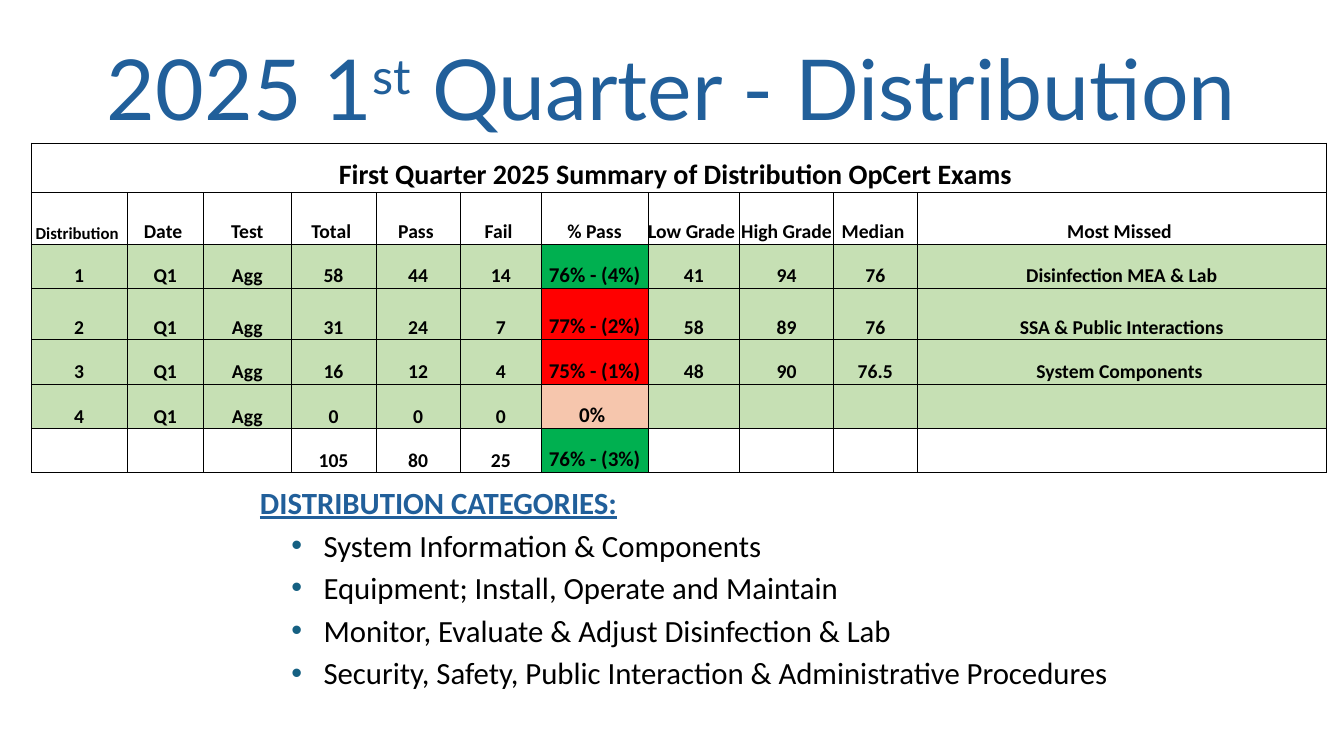
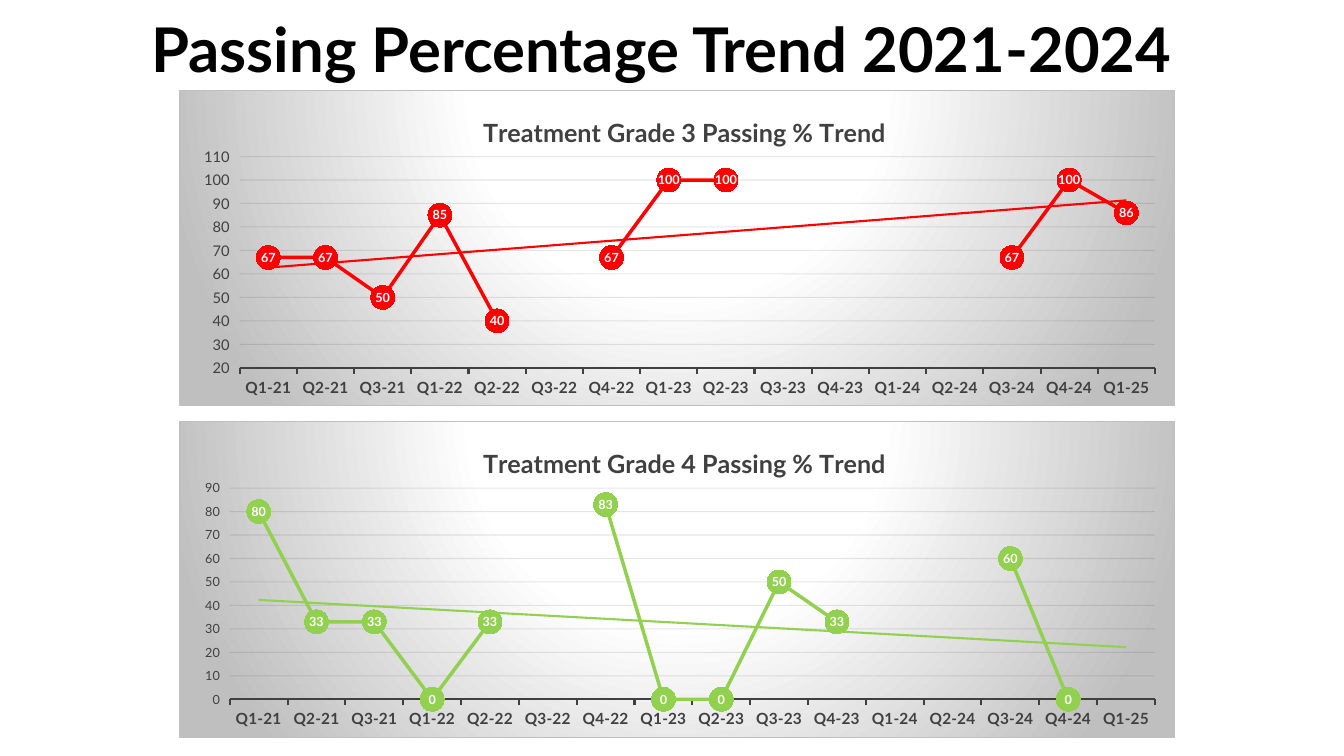
from lxml import etree
from pptx import Presentation
from pptx.chart.data import CategoryChartData
from pptx.dml.color import RGBColor
from pptx.enum.chart import XL_CHART_TYPE, XL_LABEL_POSITION, XL_MARKER_STYLE, XL_TICK_MARK
from pptx.enum.text import MSO_ANCHOR, MSO_AUTO_SIZE, PP_ALIGN
from pptx.oxml import parse_xml
from pptx.oxml.ns import nsdecls, qn
from pptx.util import Pt

LINE = XL_CHART_TYPE.LINE_MARKERS
MIDDLE = XL_LABEL_POSITION.CENTER
ROUND = XL_MARKER_STYLE.CIRCLE
OUT = XL_TICK_MARK.OUTSIDE
LOW = MSO_ANCHOR.BOTTOM
CENTER = PP_ALIGN.CENTER
FIXED = MSO_AUTO_SIZE.NONE

# Palette and fonts
BLUE, TEAL, BLACK, WHITE = "215F9A", "156082", "000000", "FFFFFF"
GRAY, EDGE, GRID = "404040", "BFBFBF", "0D0D0D"
RED, LIME = "FF0000", "92D050"
PALE, GREEN, PEACH = "C6E0B4", "00B050", "F6C6AD"
HEAD, BODY = "Lato", "Calibri"

# Table content
COLS = [68.4, 54.7, 62.6, 60.5, 60.5, 57.6, 76.3, 65.5, 67, 59.8, 292.3]
ROWS = [35.3, 36.7, 31.7, 36.7, 31.7, 31.7, 31.7]
RATE = 6
BANNER = "First Quarter 2025 Summary of Distribution OpCert Exams "
HEADS = ["Distribution ", "Date ", "Test", "Total ", "Pass ", "Fail ", "% Pass",
         "Low Grade ", "High Grade ", "Median ", "Most Missed "]
EXAMS = [
    ["1", "Q1", "Agg", "58", "44", "14", "76% - (4%)", "41", "94", "76", "Disinfection MEA & Lab"],
    ["2", "Q1", "Agg", "31", "24", "7", "77% - (2%)", "58", "89", "76", "SSA & Public Interactions"],
    ["3", "Q1", "Agg", "16", "12", "4", "75% - (1%)", "48", "90", "76.5", "System Components "],
    ["4", "Q1", "Agg", "0", "0", "0", "0% ", "", "", "", ""],
    ["", "", "", "105", "80", "25", "76% - (3%)", "", "", "", ""],
]
RATES = [GREEN, RED, RED, PEACH, GREEN]
TOPICS = [
    "System Information & Components",
    "Equipment; Install, Operate and Maintain",
    "Monitor, Evaluate & Adjust Disinfection & Lab",
    "Security, Safety, Public Interaction & Administrative Procedures",
]

# Chart content
TERMS = ("Q1-21 Q2-21 Q3-21 Q1-22 Q2-22 Q3-22 Q4-22 Q1-23 "
         "Q2-23 Q3-23 Q4-23 Q1-24 Q2-24 Q3-24 Q4-24 Q1-25").split()
GRADE3 = [67, 67, 50, 85, 40, None, 67, 100, 100, None, None, None, None, 67, 100, 86]
GRADE4 = [80, 33, 33, 0, 33, None, 83, 0, 0, 50, 33, None, None, 60, 0, None]


def rgb(code):
    return RGBColor.from_string(code)


def solid(code):
    return f'<a:solidFill><a:srgbClr val="{code}"/></a:solidFill>'


def layout(x, y, w=None, h=None):
    """Manual chart layout; with a size it sets the inner plot area."""
    inner = '<c:layoutTarget val="inner"/>' if w else ""
    size = f'<c:w val="{w}"/><c:h val="{h}"/>' if w else ""
    return parse_xml(
        f'<c:layout {nsdecls("c")}><c:manualLayout>{inner}<c:xMode val="edge"/>'
        f'<c:yMode val="edge"/><c:x val="{x}"/><c:y val="{y}"/>{size}'
        '</c:manualLayout></c:layout>')


def place(owner, node, index):
    """Put a layout in a chart part, in place of any it has."""
    for old in owner.findall(qn("c:layout")):
        owner.remove(old)
    owner.insert(index, node)


class Deck:
    def __init__(self):
        self.prs = Presentation()
        self.prs.slide_width, self.prs.slide_height = Pt(960), Pt(540)
        self.slide = None

    def style(self, font, size, color, bold=False, face=BODY):
        font.name, font.size, font.bold = face, Pt(size), bold
        font.color.rgb = rgb(color)

    def text(self, para, words, size, color, bold=False, face=BODY):
        run = para.add_run()
        run.text = words
        self.style(run.font, size, color, bold, face)
        return run

    def title(self, box, parts, size, color, bold=False):
        """Start a slide; parts are (words, raised) pairs."""
        self.slide = self.prs.slides.add_slide(self.prs.slide_layouts[5])
        shape = self.slide.shapes.title
        shape.left, shape.top, shape.width, shape.height = map(Pt, box)
        frame = shape.text_frame
        frame.auto_size, frame.vertical_anchor = FIXED, LOW
        para = frame.paragraphs[0]
        para.alignment, para.line_spacing = CENTER, 0.9
        for words, raised in parts:
            run = self.text(para, words, size, color, bold, HEAD)
            if raised:
                run.font._element.set("baseline", "30000")

    def bullets(self, box, head, items):
        frame = self.slide.shapes.add_textbox(*map(Pt, box)).text_frame
        frame.word_wrap = True
        run = self.text(frame.paragraphs[0], head, 22, BLUE, True)
        run.font.underline = True
        for item in items:
            para = frame.add_paragraph()
            props = para._p.get_or_add_pPr()
            props.set("marL", str(Pt(45.4)))
            props.set("indent", str(Pt(-23)))
            tint = etree.SubElement(props, qn("a:buClr"))
            etree.SubElement(tint, qn("a:srgbClr"), val=TEAL)
            etree.SubElement(props, qn("a:buFont"), typeface="Arial")
            etree.SubElement(props, qn("a:buChar"), char="•")
            para.space_before = Pt(4)
            self.text(para, item, 22, BLACK)

    def cell(self, cell, words, size, fill=None):
        cell.margin_left = cell.margin_right = cell.margin_top = cell.margin_bottom = 0
        cell.vertical_anchor = LOW
        para = cell.text_frame.paragraphs[0]
        para.alignment = CENTER
        if words:
            self.text(para, words, size, BLACK, True)
        # Borders come before the fill
        props = cell._tc.get_or_add_tcPr()
        for side in ("lnL", "lnR", "lnT", "lnB"):
            props.append(parse_xml(
                f'<a:{side} {nsdecls("a")} w="{Pt(0.5)}">{solid(BLACK)}</a:{side}>'))
        if fill:
            cell.fill.solid()
            cell.fill.fore_color.rgb = rgb(fill)
        else:
            cell.fill.background()

    def table(self, left, top):
        table = self.slide.shapes.add_table(
            len(ROWS), len(COLS), Pt(left), Pt(top), Pt(sum(COLS)), Pt(sum(ROWS))).table
        table.first_row = table.horz_banding = False
        for col, width in zip(table.columns, COLS):
            col.width = Pt(width)
        for row, height in zip(table.rows, ROWS):
            row.height = Pt(height)
        # Banner and heads
        table.cell(0, 0).merge(table.cell(0, len(COLS) - 1))
        for c, head in enumerate(HEADS):
            self.cell(table.cell(0, c), "" if c else BANNER, 20)
            self.cell(table.cell(1, c), head, 14 if c else 12)
        # Exams, then the total row
        for r, (exam, rate) in enumerate(zip(EXAMS, RATES)):
            base = PALE if exam[0] else None
            for c, words in enumerate(exam):
                hit = c == RATE
                self.cell(table.cell(r + 2, c), words, 15 if hit else 14, rate if hit else base)

    def trend(self, top, name, values, color, low, high, size, plot):
        """Line chart with a linear trend line."""
        data = CategoryChartData()
        data.categories = TERMS
        data.add_series("Series 1", values)
        chart = self.slide.shapes.add_chart(
            LINE, Pt(128.2), Pt(top), Pt(711.4), Pt(226), data).chart
        self.style(chart.font, 10, BLACK, face=HEAD)
        chart.has_legend = False

        # Title and plot area
        chart.has_title = True
        para = chart.chart_title.text_frame.paragraphs[0]
        self.text(para, name, 18, GRAY, True, HEAD)
        place(chart.chart_title._element, layout(0.3, 0.06), 1)
        area = chart.element.find(qn("c:chart")).find(qn("c:plotArea"))
        place(area, layout(*plot), 0)

        # Axes
        cat, val = chart.category_axis, chart.value_axis
        self.style(cat.tick_labels.font, 11, GRAY, True, HEAD)
        self.style(val.tick_labels.font, size, GRAY, face=HEAD)
        cat.major_tick_mark = val.major_tick_mark = OUT
        cat.format.line.color.rgb, cat.format.line.width = rgb(GRAY), Pt(1.5)
        val.format.line.fill.background()
        val.minimum_scale, val.maximum_scale, val.major_unit = low, high, 10
        val.has_major_gridlines = True
        grid = val.major_gridlines.format.line
        grid.color.rgb, grid.width = rgb(GRID), Pt(0.75)
        for tint in val._element.find(qn("c:majorGridlines")).iter(qn("a:srgbClr")):
            etree.SubElement(tint, qn("a:alpha"), val="10000")

        # Series, markers and labels
        chart.plots[0].vary_by_categories = False
        line = chart.plots[0].series[0]
        line.smooth = False
        line.format.line.color.rgb, line.format.line.width = rgb(color), Pt(2.5)
        mark = line.marker
        mark.style, mark.size = ROUND, 17
        mark.format.fill.solid()
        mark.format.fill.fore_color.rgb = rgb(color)
        mark.format.line.fill.background()
        labels = line.data_labels
        labels.show_value, labels.position = True, MIDDLE
        self.style(labels.font, 9, WHITE, True, HEAD)
        line._element.find(qn("c:dLbls")).addnext(parse_xml(
            f'<c:trendline {nsdecls("c", "a")}><c:spPr><a:ln w="{Pt(1.5)}">{solid(color)}'
            '</a:ln></c:spPr><c:trendlineType val="linear"/><c:dispRSqr val="0"/>'
            '<c:dispEq val="0"/></c:trendline>'))

        # Radial backdrop
        stops = "".join(f'<a:gs pos="{pos}"><a:srgbClr val="{code}"/></a:gs>'
                        for pos, code in ((0, WHITE), (39000, WHITE), (100000, EDGE)))
        chart.element.find(qn("c:chart")).addnext(parse_xml(
            f'<c:spPr {nsdecls("c", "a")}><a:gradFill><a:gsLst>{stops}</a:gsLst>'
            '<a:path path="circle"><a:fillToRect l="50000" t="-80000" r="50000" b="180000"/>'
            f'</a:path></a:gradFill><a:ln w="{Pt(0.75)}">{solid(EDGE)}</a:ln></c:spPr>'))


def main():
    deck = Deck()

    # Distribution summary
    deck.title((29.5, 24.5, 900, 77.8),
               [("2025 1", False), ("st", True), (" Quarter - Distribution", False)], 60, BLUE)
    deck.bullets((178.6, 342, 704.9, 167.8), "DISTRIBUTION CATEGORIES:", TOPICS)
    deck.table(22.3, 102.2)

    # Passing trends
    deck.title((50.4, -14.4, 844.6, 79.2),
               [("Passing Percentage Trend 2021-2024", False)], 44, BLACK, True)
    deck.trend(64.2, "Treatment Grade 3 Passing % Trend", GRADE3, RED, 20, 110, 10.5,
               (0.06, 0.21, 0.92, 0.67))
    deck.trend(301, "Treatment Grade 4 Passing % Trend", GRADE4, LIME, 0, 90, 9,
               (0.05, 0.21, 0.93, 0.67))

    deck.prs.save("out.pptx")


if __name__ == "__main__":
    main()
